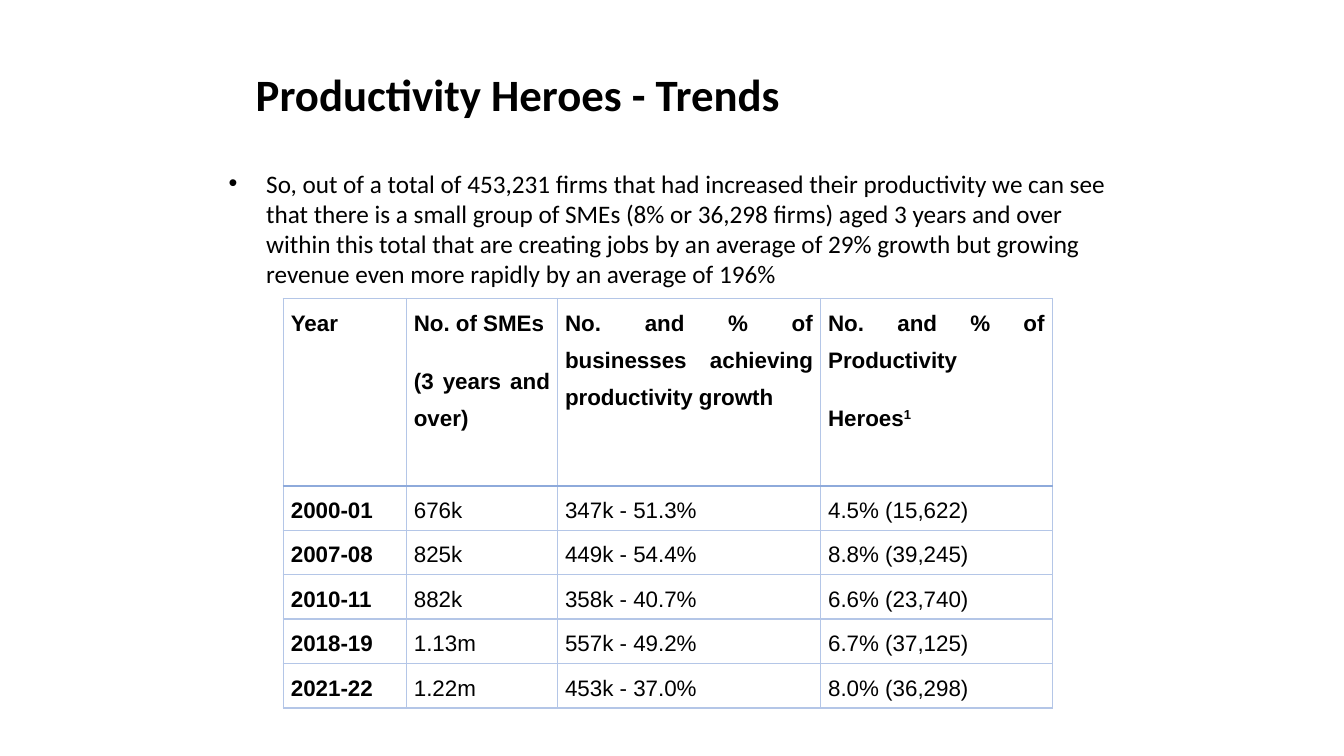
from lxml import etree
from pptx import Presentation
from pptx.dml.color import RGBColor
from pptx.enum.text import MSO_ANCHOR, PP_ALIGN
from pptx.oxml.ns import qn
from pptx.util import Cm, Pt

CENTER, JUSTIFY, MIDDLE = PP_ALIGN.CENTER, PP_ALIGN.JUSTIFY, MSO_ANCHOR.MIDDLE

TITLE = "Productivity Heroes - Trends"
SUMMARY = (
    "So, out of a total of 453,231 firms that had increased their productivity "
    "we can see that there is a small group of SMEs (8% or 36,298 firms) aged "
    "3 years and over within this total that are creating jobs by an average of "
    "29% growth but growing revenue even more rapidly by an average of 196%"
)
HEADER = (
    "Year",
    "No. of SMEs\n(3 years and over)",
    "No. and % of businesses achieving productivity growth",
    "No. and % of Productivity\nHeroes",
)
FOOTNOTE_MARK = "1"
ROWS = [
    ("2000-01", "676k", "347k - 51.3%", "4.5% (15,622)"),
    ("2007-08", "825k", "449k - 54.4%", "8.8% (39,245)"),
    ("2010-11", "882k", "358k - 40.7%", "6.6% (23,740)"),
    ("2018-19", "1.13m", "557k - 49.2%", "6.7% (37,125)"),
    ("2021-22", "1.22m", "453k - 37.0%", "8.0% (36,298)"),
]
COL_WIDTHS = (3.1, 3.81, 6.63, 5.84)
HEADER_HEIGHT, ROW_HEIGHT = 4.72, 1.12
THIN, HEADER_RULE = ("B4C6E7", 1), ("8EAADB", 1.5)


def rgb(value):
    return RGBColor.from_string(value)


def style(font, size, name, bold=False):
    font.size, font.name, font.bold = Pt(size), name, bold
    font.color.rgb = rgb("000000")


def place(shape, left, top, width, height):
    shape.left, shape.top = Cm(left), Cm(top)
    shape.width, shape.height = Cm(width), Cm(height)


def set_borders(cell, top, bottom):
    tcPr = cell._tc.get_or_add_tcPr()
    sides = {"a:lnL": THIN, "a:lnR": THIN, "a:lnT": top, "a:lnB": bottom}
    for tag, (color, width) in sides.items():
        ln = etree.SubElement(tcPr, qn(tag), w=str(Pt(width)))
        fill = etree.SubElement(ln, qn("a:solidFill"))
        etree.SubElement(fill, qn("a:srgbClr"), val=color)


def fill_cell(cell, text, bold, mark=""):
    cell.margin_left = cell.margin_right = Cm(0.19)
    cell.margin_top = cell.margin_bottom = 0
    tf = cell.text_frame
    tf.text = text
    if mark:
        r = tf.paragraphs[-1].add_run()
        r.text = mark
        r.font._element.set("baseline", "30000")
    for p in tf.paragraphs:
        p.alignment, p.line_spacing, p.space_after = JUSTIFY, 1.5, Pt(15)
        for r in p.runs:
            style(r.font, 16, "Arial", bold)


prs = Presentation()
prs.slide_width, prs.slide_height = Cm(33.87), Cm(19.05)
s = prs.slides.add_slide(prs.slide_layouts[5])

title = s.shapes.title
place(title, 1.7, 0.76, 22.71, 3.18)
tf = title.text_frame
tf.text = TITLE
tf.vertical_anchor = MIDDLE
p = tf.paragraphs[0]
p.alignment = CENTER
style(p.runs[0].font, 32, "Calibri", True)

summary = s.shapes.add_textbox(Cm(5.51), Cm(4.11), Cm(22.86), Cm(12.9))
tf = summary.text_frame
tf.word_wrap = True
tf.text = SUMMARY
p = tf.paragraphs[0]
pPr = p._p.get_or_add_pPr()
pPr.set("marL", str(Cm(0.95)))
pPr.set("indent", str(-Cm(0.95)))
etree.SubElement(pPr, qn("a:buFont"), typeface="Arial")
etree.SubElement(pPr, qn("a:buChar"), char="•")
style(p.runs[0].font, 18, "Calibri")

table_height = HEADER_HEIGHT + ROW_HEIGHT * len(ROWS)
table = s.shapes.add_table(
    len(ROWS) + 1, len(HEADER), Cm(7.14), Cm(7.52),
    Cm(sum(COL_WIDTHS)), Cm(table_height)).table
table.first_row = table.horz_banding = False
for column, width in zip(table.columns, COL_WIDTHS):
    column.width = Cm(width)
for i, values in enumerate([HEADER] + ROWS):
    table.rows[i].height = Cm(ROW_HEIGHT if i else HEADER_HEIGHT)
    for j, value in enumerate(values):
        cell = table.cell(i, j)
        is_heroes_header = i == 0 and j == len(HEADER) - 1
        fill_cell(cell, value, i == 0 or j == 0, FOOTNOTE_MARK if is_heroes_header else "")
        set_borders(cell, HEADER_RULE if i == 1 else THIN, HEADER_RULE if i == 0 else THIN)
        cell.fill.background()

prs.save("out.pptx")
